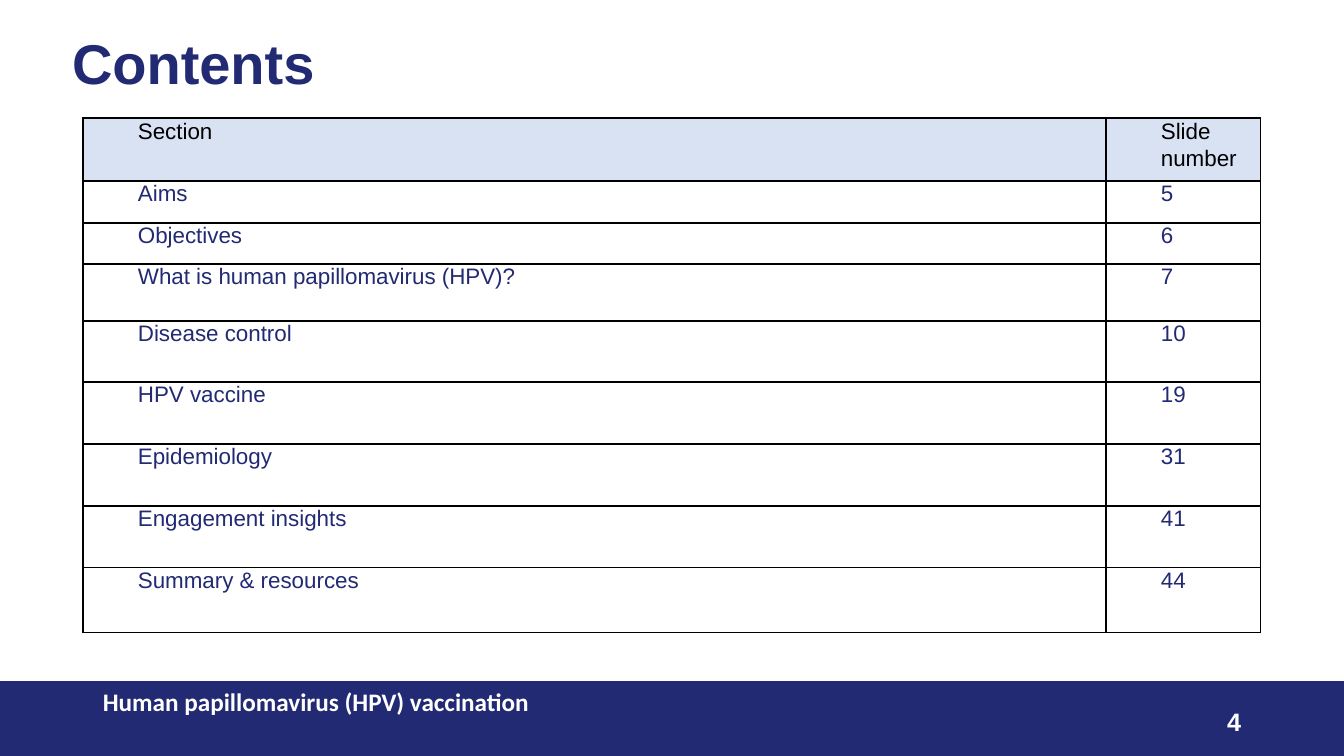
from lxml import etree
from pptx import Presentation
from pptx.dml.color import RGBColor
from pptx.enum.shapes import MSO_SHAPE
from pptx.enum.text import MSO_ANCHOR, MSO_AUTO_SIZE, PP_ALIGN
from pptx.oxml.ns import qn
from pptx.util import Pt

RECTANGLE = MSO_SHAPE.RECTANGLE
TOP, MIDDLE = MSO_ANCHOR.TOP, MSO_ANCHOR.MIDDLE
LEFT, RIGHT = PP_ALIGN.LEFT, PP_ALIGN.RIGHT
NO_AUTOFIT = MSO_AUTO_SIZE.NONE

# Content
TITLE = "Contents"
FOOTER = "Human papillomavirus (HPV) vaccination"
SLIDE_NUMBER = "4"
CONTENTS = [
    # section, slide number, row height in px
    ("Section", "Slide number", 63),
    ("Aims", "5", 42),
    ("Objectives", "6", 41),
    ("What is human papillomavirus (HPV)?", "7", 57),
    ("Disease control", "10", 61),
    ("HPV vaccine", "19", 62),
    ("Epidemiology", "31", 62),
    ("Engagement insights", "41", 62),
    ("Summary & resources", "44", 65),
]
COLUMN_WIDTHS = [1023, 155]

NAVY, WHITE, BLACK, HEADER_BLUE = "212A73", "FFFFFF", "000000", "D9E2F3"
EMU_PER_INCH, PX_PER_INCH = 914400, 100.8


def px(length):
    return round(length * EMU_PER_INCH / PX_PER_INCH)


def color(value):
    return RGBColor.from_string(value)


def format_text(text_frame, size, font_name, text_color, bold=False, alignment=LEFT):
    for paragraph in text_frame.paragraphs:
        paragraph.alignment = alignment
        for run in paragraph.runs:
            run.font.size = Pt(size)
            run.font.name = font_name
            run.font.bold = bold
            run.font.color.rgb = color(text_color)


def add_label(slide, box, text, font_name, anchor, alignment):
    label = slide.shapes.add_textbox(*map(px, box))
    label.text_frame.word_wrap = True
    label.text_frame.vertical_anchor = anchor
    label.text_frame.text = text
    format_text(label.text_frame, 18, font_name, WHITE, True, alignment)


def add_borders(cell):
    properties = cell._tc.get_or_add_tcPr()
    for side in ("a:lnL", "a:lnR", "a:lnT", "a:lnB"):
        line = etree.SubElement(properties, qn(side), w=str(Pt(1)))
        fill = etree.SubElement(line, qn("a:solidFill"))
        etree.SubElement(fill, qn("a:srgbClr"), val=BLACK)


def fill_cell(cell, text, is_header):
    add_borders(cell)
    cell.margin_left = cell.margin_right = px(5)
    cell.margin_top = cell.margin_bottom = 0
    cell.text_frame.text = text
    format_text(cell.text_frame, 16, "Arial", BLACK if is_header else NAVY)
    paragraph = cell.text_frame.paragraphs[0]
    paragraph._p.get_or_add_pPr().set("marL", str(px(50)))
    if is_header:
        paragraph.line_spacing = 1.07
        cell.fill.solid()
        cell.fill.fore_color.rgb = color(HEADER_BLUE)
    else:
        cell.fill.background()


def main():
    presentation = Presentation()
    presentation.slide_width, presentation.slide_height = px(1344), px(756)
    slide = presentation.slides.add_slide(presentation.slide_layouts[5])

    # Footer band
    band = slide.shapes.add_shape(RECTANGLE, *map(px, (0, 682, 1344, 74)))
    band.shadow.inherit = False
    band.fill.solid()
    band.fill.fore_color.rgb = color(NAVY)
    band.line.color.rgb = color(NAVY)
    band.line.width = Pt(1)

    # Title
    title = slide.shapes.title
    title.left, title.top, title.width, title.height = map(px, (62, 31, 1178, 146))
    title.text_frame.text = TITLE
    title.text_frame.vertical_anchor = TOP
    title.text_frame.auto_size = NO_AUTOFIT
    title.text_frame.paragraphs[0].line_spacing = 0.9
    format_text(title.text_frame, 40, "Arial", NAVY, True)

    # Contents table
    table_height = sum(height for _, _, height in CONTENTS)
    table_box = (83, 118, sum(COLUMN_WIDTHS), table_height)
    table = slide.shapes.add_table(
        len(CONTENTS), len(COLUMN_WIDTHS), *map(px, table_box)).table
    table.horz_banding = False
    for column, width in zip(table.columns, COLUMN_WIDTHS):
        column.width = px(width)
    for row_index, (section, number, height) in enumerate(CONTENTS):
        table.rows[row_index].height = px(height)
        for column_index, text in enumerate((section, number)):
            fill_cell(table.cell(row_index, column_index), text, row_index == 0)

    # Footer text and slide number
    add_label(slide, (93, 681, 806, 40), FOOTER, "Calibri", TOP, LEFT)
    add_label(slide, (949, 701, 302, 40), SLIDE_NUMBER, "Arial", MIDDLE, RIGHT)

    presentation.save("out.pptx")


if __name__ == "__main__":
    main()
